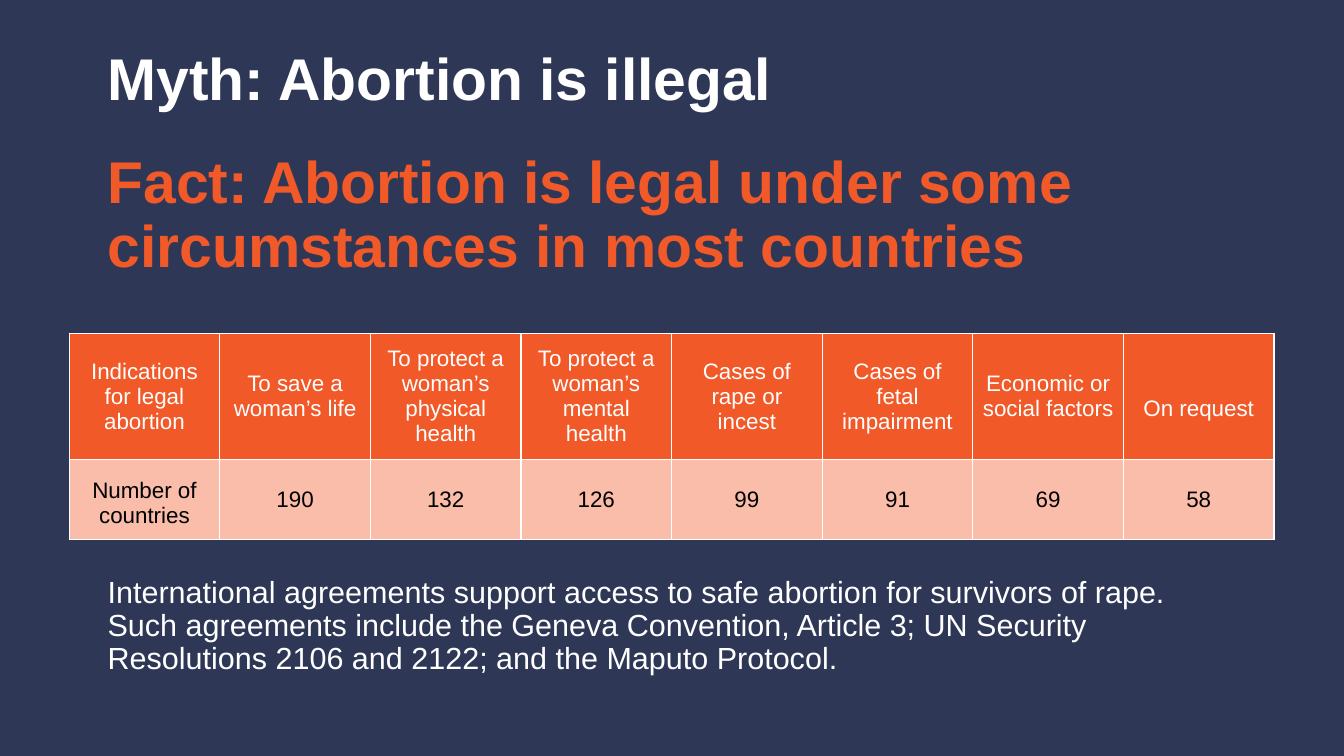
import pptx
import pptx.util
import pptx.dml.color
import pptx.enum.text
import pptx.oxml
from pptx.oxml import ns

Pt = pptx.util.Pt
RGBColor = pptx.dml.color.RGBColor
Align = pptx.enum.text.PP_ALIGN
Anchor = pptx.enum.text.MSO_ANCHOR

NAVY = RGBColor(0x2E, 0x38, 0x56)
ORANGE = RGBColor(0xF1, 0x59, 0x28)
PEACH = RGBColor(0xF9, 0xBD, 0xA9)
WHITE = RGBColor(0xFF, 0xFF, 0xFF)
BLACK = RGBColor(0, 0, 0)

TEXT_LEFT = 69.84
CELL_INSET = 6.6
COUNTRIES_BY_INDICATION = [
    ("Indications for legal abortion", "Number of countries"),
    ("To save a woman’s life", "190"),
    ("To protect a woman’s physical health", "132"),
    ("To protect a woman’s mental health", "126"),
    ("Cases of rape or incest", "99"),
    ("Cases of fetal impairment", "91"),
    ("Economic or social factors", "69"),
    ("On request", "58"),
]
# Extra top inset that lowers the text of a cell
LOWERED = {"On request": 18, "Number of countries": 5.8}


def set_font(font, color, **values):
    for name, value in {"name": "Arial", "bold": False, **values}.items():
        setattr(font, name, value)
    font.color.rgb = color


def add_text(slide, text, top, width, height, color, **font_values):
    box = slide.shapes.add_textbox(Pt(TEXT_LEFT), Pt(top), Pt(width), Pt(height))
    frame = box.text_frame
    frame.word_wrap = True
    for side in ("left", "top", "right", "bottom"):
        setattr(frame, f"margin_{side}", Pt(7.2))
    paragraph = frame.paragraphs[0]
    paragraph.text = text
    paragraph.line_spacing = 0.9
    set_font(paragraph.font, color, **font_values)


def add_borders(cell):
    """Draw a white 1 pt line on all four sides, ahead of the cell's fill."""
    properties = cell._tc.get_or_add_tcPr()
    for position, side in enumerate(("lnL", "lnR", "lnT", "lnB")):
        properties.insert(position, pptx.oxml.parse_xml(
            f'<a:{side} {ns.nsdecls("a")} w="12700"><a:solidFill>'
            f'<a:srgbClr val="{WHITE}"/></a:solidFill></a:{side}>'))


def fill_cell(cell, text, fill, color):
    cell.fill.solid()
    cell.fill.fore_color.rgb = fill
    add_borders(cell)
    cell.vertical_anchor = Anchor.MIDDLE
    for side in ("left", "top", "right", "bottom"):
        setattr(cell, f"margin_{side}", Pt(CELL_INSET))
    cell.margin_top = Pt(CELL_INSET + LOWERED.get(text, 0))
    paragraph = cell.text_frame.paragraphs[0]
    paragraph.text = text
    paragraph.alignment = Align.CENTER
    set_font(paragraph.font, color, size=Pt(16))


def add_indications_table(slide):
    row_heights = (84.3, 54.3)
    column_width = 107.6
    columns = len(COUNTRIES_BY_INDICATION)
    table = slide.shapes.add_table(
        2, columns, Pt(49.4), Pt(238.2),
        Pt(column_width * columns), Pt(sum(row_heights))).table
    table.first_row = table.horz_banding = False
    for row, height in zip(table.rows, row_heights):
        row.height = Pt(height)
    for index, (indication, count) in enumerate(COUNTRIES_BY_INDICATION):
        table.columns[index].width = Pt(column_width)
        fill_cell(table.cell(0, index), indication, ORANGE, WHITE)
        fill_cell(table.cell(1, index), count, PEACH, BLACK)


def main():
    deck = pptx.Presentation()
    deck.slide_width, deck.slide_height = Pt(960), Pt(540)
    slide = deck.slides.add_slide(deck.slide_layouts[6])
    slide.background.fill.solid()
    slide.background.fill.fore_color.rgb = NAVY

    add_text(slide, "Myth: Abortion is illegal", 28.1, 720, 75.6, WHITE,
             size=Pt(42), bold=True)
    add_text(slide, "Fact: Abortion is legal under some circumstances in most countries",
             102.2, 820, 110, ORANGE, size=Pt(42), bold=True)
    add_indications_table(slide)
    add_text(slide,
             "International agreements support access to safe abortion for "
             "survivors of rape.\vSuch agreements include the Geneva Convention, "
             "Article 3; UN Security Resolutions 2106 and 2122; and the Maputo Protocol.",
             405, 820, 90, WHITE, size=Pt(21.8))
    deck.save("out.pptx")


if __name__ == "__main__":
    main()
